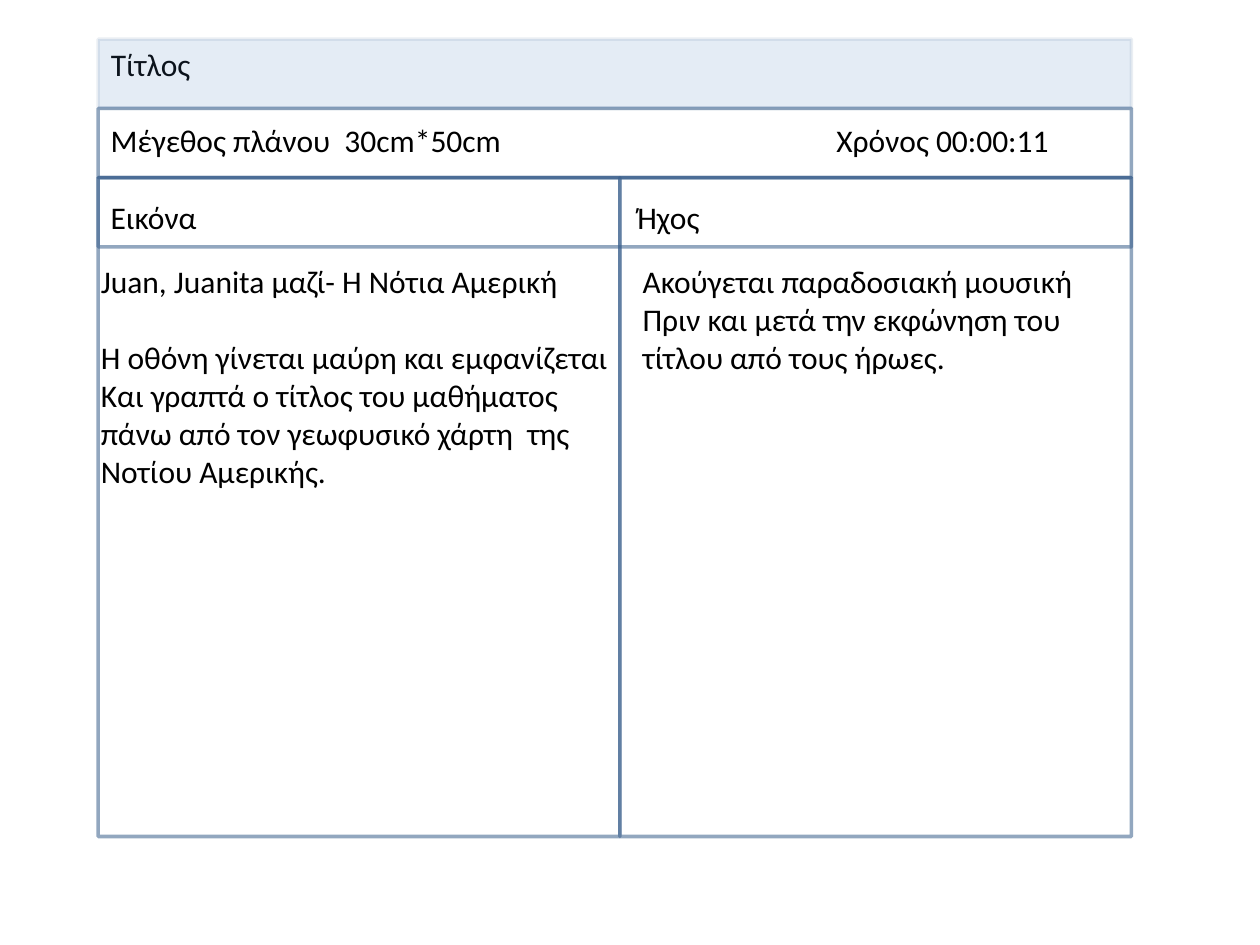
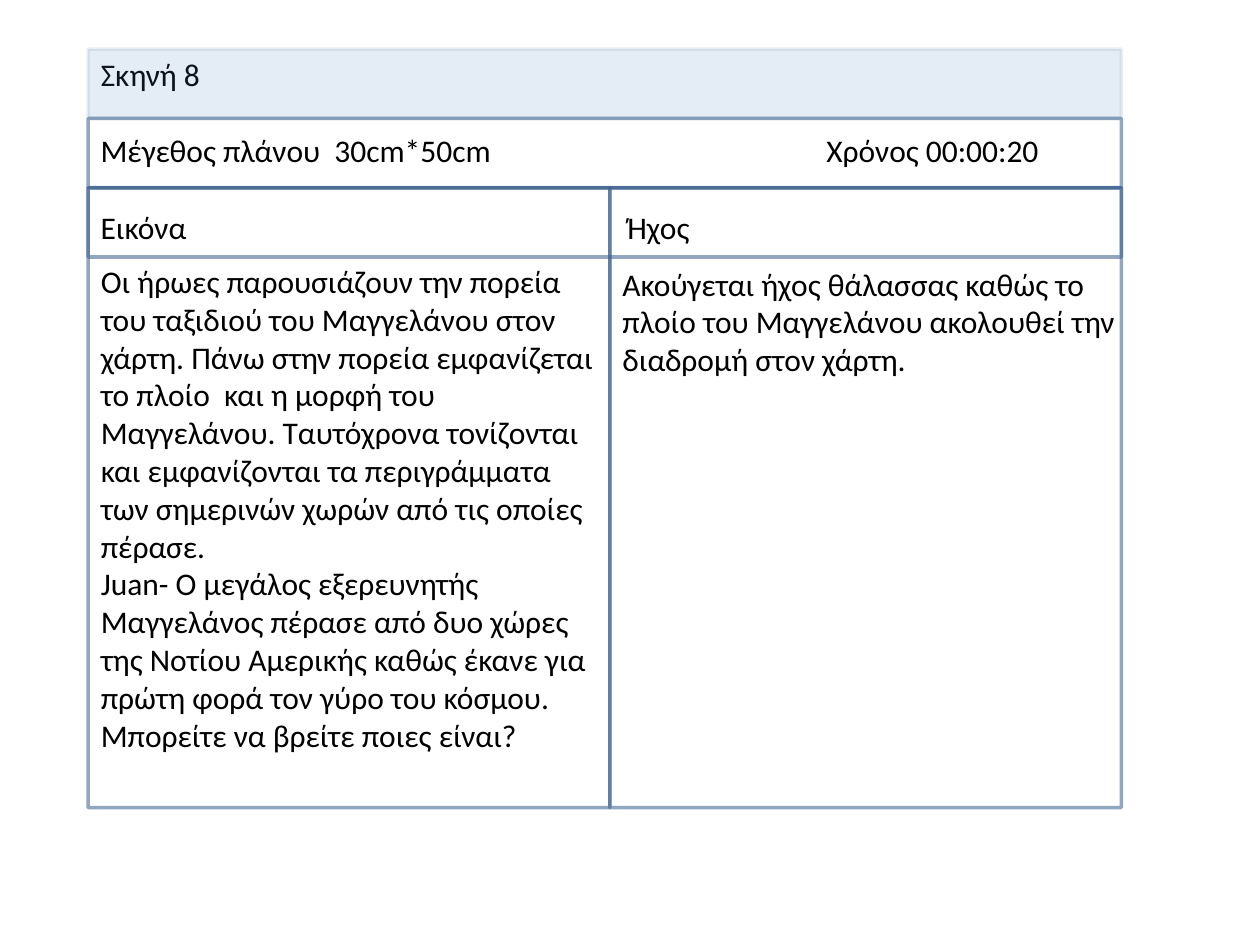
from pptx import Presentation
from pptx.dml.color import RGBColor
from pptx.enum.shapes import MSO_SHAPE
from pptx.enum.text import MSO_ANCHOR, MSO_AUTO_SIZE, PP_ALIGN
from pptx.oxml.ns import qn
from pptx.util import Inches, Pt
from lxml.etree import SubElement

THEME = {
    "font": {"name": "Calibri", "size": Pt(18)},
    "text": RGBColor(0x00, 0x00, 0x00),
    "band": RGBColor(0x4F, 0x81, 0xBD),
    "line": RGBColor(0x3A, 0x5F, 0x8C),
    "line_width": Pt(2),
    "blank_line": Pt(22),
    "band_alpha": 15,
    "band_line_alpha": 10,
    "cell_line_alpha": 54,
}
FRAME_FORMAT = {"word_wrap": True, "auto_size": MSO_AUTO_SIZE.NONE,
                "vertical_anchor": MSO_ANCHOR.TOP}

# Storyboard grid; label places are offsets from the frame's corner
WIDTH, IMAGE_WIDTH, ROW = 8.2, 4.14, 0.55
DETAILS_TOP, HEADINGS_TOP, LABEL_HEIGHT = 0.6, 1.21, 0.4
TIME_LEFT, SOUND_LEFT = 5.76, 4.18

# Each text is a list of (gap before, words)
GAP = THEME["blank_line"]
SCENES = [
    {
        "title": "Τίτλος", "time": "00:00:11",
        "left": 0.78, "top": 0.31, "column_height": 5.23,
        "image_box": (0.7, 2.03, 4.38, 2.52),
        "image": [
            (0, "Juan, Juanita μαζί- Η Νότια Αμερική"),
            (GAP, "Η οθόνη γίνεται μαύρη και εμφανίζεται"),
            (0, "Και γραπτά ο τίτλος του μαθήματος πάνω από τον γεωφυσικό "
                "χάρτη  της Νοτίου Αμερικής."),
        ],
        "sound_box": (5, 2.03, 4.38, 1.31),
        "sound": [
            (0, "Ακούγεται παραδοσιακή μουσική"),
            (0, "Πριν και μετά την εκφώνηση του"),
            (0, "τίτλου από τους ήρωες."),
        ],
    },
    {
        "title": "Σκηνή 8", "time": "00:00:20",
        "left": 0.7, "top": 0.39, "column_height": 4.92,
        "image_box": (0.7, 2.03, 4.14, 4.04),
        "image": [
            (0, "Οι ήρωες παρουσιάζουν την πορεία του ταξιδιού του Μαγγελάνου "
                "στον χάρτη. Πάνω στην πορεία εμφανίζεται το πλοίο  και η "
                "μορφή του Μαγγελάνου. Ταυτόχρονα τονίζονται και εμφανίζονται "
                "τα περιγράμματα των σημερινών χωρών από τις οποίες πέρασε."),
            (0, "Juan- Ο μεγάλος εξερευνητής Μαγγελάνος πέρασε από δυο χώρες "
                "της Νοτίου Αμερικής καθώς έκανε για πρώτη φορά τον γύρο του "
                "κόσμου. Μπορείτε να βρείτε ποιες είναι?"),
        ],
        "sound_box": (4.84, 2.05, 4.14, 1.01),
        "sound": [
            (0, "Ακούγεται ήχος θάλασσας καθώς το πλοίο του Μαγγελάνου "
                "ακολουθεί την διαδρομή στον χάρτη."),
        ],
    },
]


def write_text(shape, box, lines):
    """Place the shape and fill it with plain, unbulleted paragraphs."""
    for name, value in zip(("left", "top", "width", "height"), box):
        setattr(shape, name, Inches(value))
    frame = shape.text_frame
    for name, value in FRAME_FORMAT.items():
        setattr(frame, name, value)
    for index, (gap, words) in enumerate(lines):
        paragraph = frame.add_paragraph() if index else frame.paragraphs[0]
        paragraph.alignment = PP_ALIGN.LEFT
        paragraph.space_before = Pt(0) if gap == 0 else gap
        properties = paragraph._p.get_or_add_pPr()
        properties.set("marL", "0")
        properties.set("indent", "0")
        SubElement(properties, qn("a:buNone"))
        run = paragraph.add_run()
        run.text = words
        run.font.color.rgb = THEME["text"]
        for name, value in THEME["font"].items():
            setattr(run.font, name, value)


def add_cell(slide, box, line_alpha, fill_alpha=None):
    """Add a translucent outlined rectangle, with a tint if asked."""
    cell = slide.shapes.add_shape(MSO_SHAPE.RECTANGLE, *map(Inches, box))
    cell.shadow.inherit = False
    cell.line.color.rgb = THEME["line"]
    cell.line.width = THEME["line_width"]
    paints = [(cell.line.fill, line_alpha)]
    if fill_alpha is None:
        cell.fill.background()
    else:
        cell.fill.solid()
        cell.fill.fore_color.rgb = THEME["band"]
        paints.append((cell.fill, fill_alpha))
    for paint, alpha in paints:
        color = paint._xPr.find(qn("a:solidFill"))[0]
        SubElement(color, qn("a:alpha")).set("val", str(alpha * 1000))


presentation = Presentation()
presentation.slide_width = Inches(10)
presentation.slide_height = Inches(7.5)
two_content_layout = presentation.slide_layouts[3]

for scene in SCENES:
    slide = presentation.slides.add_slide(two_content_layout)
    left, top = scene["left"], scene["top"]

    # Title, image and sound texts
    title, image, sound = slide.placeholders
    write_text(title, (left, top, WIDTH, ROW), [(0, scene["title"])])
    write_text(image, scene["image_box"], scene["image"])
    write_text(sound, scene["sound_box"], scene["sound"])

    # Shot details and column headings
    for label_left, label_top, label_width, words in (
        (0, DETAILS_TOP, TIME_LEFT, "Μέγεθος πλάνου  30cm*50cm"),
        (TIME_LEFT, DETAILS_TOP, WIDTH - TIME_LEFT, f"Χρόνος {scene['time']}"),
        (0, HEADINGS_TOP, IMAGE_WIDTH, "Εικόνα"),
        (SOUND_LEFT, HEADINGS_TOP, WIDTH - SOUND_LEFT, "Ήχος"),
    ):
        box = (left + label_left, top + label_top, label_width, LABEL_HEIGHT)
        label = slide.shapes.add_textbox(*map(Inches, box))
        write_text(label, box, [(0, words)])

    # Frame: details row, title band, two columns, heading row
    columns_top = top + 2 * ROW
    column_height = scene["column_height"]
    add_cell(slide, (left, top + ROW, WIDTH, ROW), THEME["cell_line_alpha"])
    add_cell(slide, (left, top, WIDTH, ROW),
             THEME["band_line_alpha"], THEME["band_alpha"])
    for box in (
        (left, columns_top, IMAGE_WIDTH, column_height),
        (left + IMAGE_WIDTH, columns_top, WIDTH - IMAGE_WIDTH, column_height),
        (left, columns_top, WIDTH, ROW),
    ):
        add_cell(slide, box, THEME["cell_line_alpha"])

presentation.save("out.pptx")
